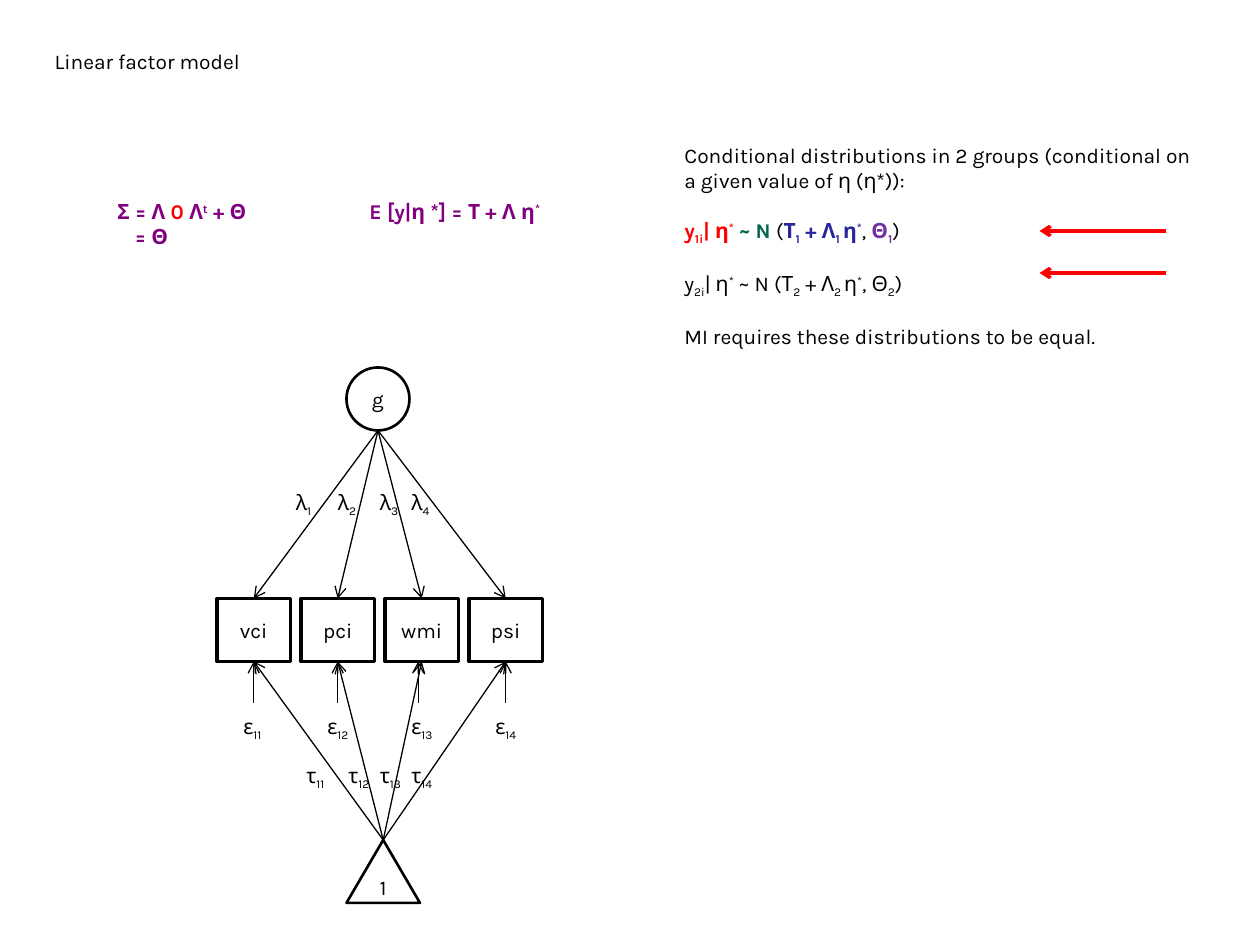
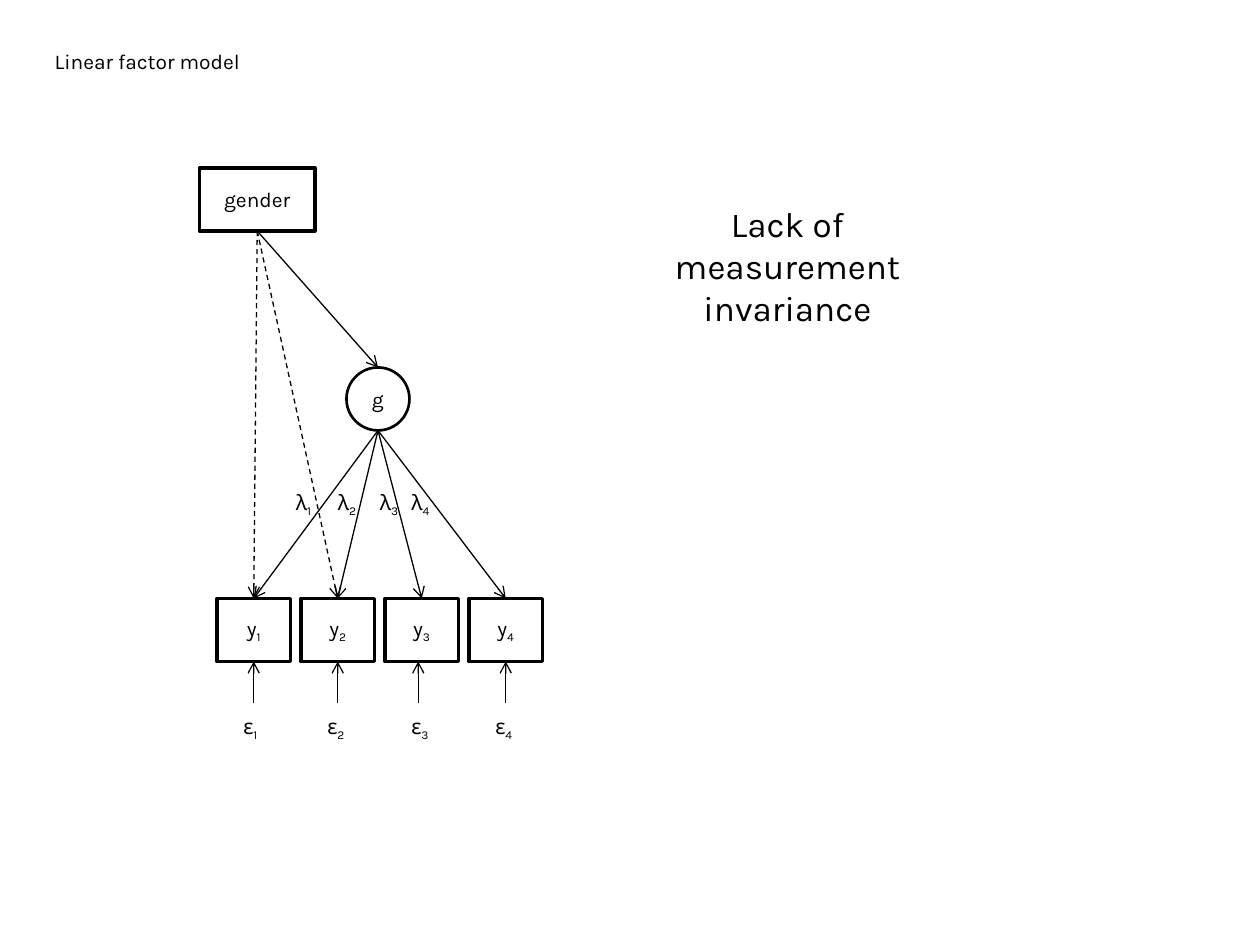
"""Build two slides showing a linear factor model as path diagrams."""
from dataclasses import dataclass, replace
from typing import NamedTuple

from lxml.etree import SubElement
from pptx import Presentation
from pptx.dml.color import RGBColor
from pptx.enum.dml import MSO_LINE
from pptx.enum.shapes import MSO_CONNECTOR, MSO_SHAPE
from pptx.enum.text import MSO_ANCHOR, PP_ALIGN
from pptx.oxml.ns import qn
from pptx.util import Pt


@dataclass(frozen=True)
class Theme:
    font: str = "Karla"
    body_size: float = 12
    large_size: float = 20
    black: str = "000000"
    white: str = "FFFFFF"
    red: str = "FF0000"
    green: str = "00664D"
    blue: str = "262699"
    violet: str = "7030A0"
    purple: str = "800080"
    thin: float = 0.75
    medium: float = 1.5
    thick: float = 2


THEME = Theme()
SUB, SUPER = -25, 30


class Point(NamedTuple):
    x: float
    y: float


class Area(NamedTuple):
    left: float
    top: float
    width: float
    height: float

    @property
    def top_mid(self) -> Point:
        return Point(self.left + self.width / 2, self.top)

    @property
    def bottom_mid(self) -> Point:
        return Point(self.left + self.width / 2, self.top + self.height)


@dataclass(frozen=True)
class Run:
    text: str
    base: int = 0
    color: str = THEME.black
    bold: bool = False


@dataclass(frozen=True)
class Para:
    runs: list[Run]
    before: float = 0
    indent: float = 0


@dataclass(frozen=True)
class Node:
    shape: MSO_SHAPE
    area: Area
    runs: list[Run]
    weight: float = THEME.thick
    filled: bool = True


@dataclass(frozen=True)
class Arrow:
    start: Point
    end: Point
    color: str = THEME.black
    weight: float = THEME.thin
    dashed: bool = False


TITLE = Area(24, 24, 672, 22)
INDICATORS = [Area(124 + 48 * i, 342, 42, 36) for i in range(4)]
FACTOR = Area(198, 210, 36, 36)
CONSTANT = Area(198, 480, 42, 36)
GENDER = Area(114, 96, 66, 36)
LOADING_LEFTS = (162, 186, 210, 228)
ERROR_LEFTS = (132, 180, 228, 276)
INTERCEPT_LEFTS = (168, 192, 210, 228)
ERROR_XS = (145, 193, 239, 289)


def styled(runs: list[Run], color: str) -> list[Run]:
    """Return the runs in bold and in one colour."""
    return [replace(run, color=color, bold=True) for run in runs]


def indexed(symbol: str, index: str) -> list[Run]:
    """Return a symbol with a subscript."""
    return [Run(symbol), Run(index, SUB)]


def eta_star(before: str) -> list[Run]:
    """Return text ending in eta, with a raised star."""
    return [Run(before + "η"), Run("*", SUPER)]


def mean(group: int) -> list[Run]:
    """Return the conditional mean of a group."""
    return [*indexed("Τ", str(group)), *indexed(" + Λ", f"{group} "), *eta_star("")]


def write(tf, paras: list[Para], size: float = THEME.body_size, align=PP_ALIGN.LEFT) -> None:
    """Fill a text frame with formatted paragraphs."""
    tf.word_wrap = True
    for i, para in enumerate(paras):
        p = tf.paragraphs[0] if i == 0 else tf.add_paragraph()
        p.alignment = align
        p.space_before = Pt(para.before)
        if para.indent:
            p._p.get_or_add_pPr().set("marL", str(Pt(para.indent)))
        for run in para.runs:
            r = p.add_run()
            r.text = run.text
            r.font.name = THEME.font
            r.font.size = Pt(size)
            r.font.bold = run.bold
            r.font.color.rgb = RGBColor.from_string(run.color)
            if run.base:
                r._r.get_or_add_rPr().set("baseline", str(run.base * 1000))


def add_text(slide, area: Area, paras: list[Para], **style) -> None:
    """Add a text box."""
    sp = slide.shapes.add_textbox(*map(Pt, area))
    write(sp.text_frame, paras, **style)


def add_node(slide, node: Node) -> None:
    """Draw one variable of the path diagram."""
    sp = slide.shapes.add_shape(node.shape, *map(Pt, node.area))
    sp.shadow.inherit = False
    sp.line.color.rgb = RGBColor.from_string(THEME.black)
    sp.line.width = Pt(node.weight)
    tf = sp.text_frame
    tf.vertical_anchor = MSO_ANCHOR.MIDDLE
    if node.filled:
        sp.fill.solid()
        sp.fill.fore_color.rgb = RGBColor.from_string(THEME.white)
    else:
        sp.fill.background()
        tf.margin_left = tf.margin_right = Pt(0)
    write(tf, [Para(node.runs)], align=PP_ALIGN.CENTER)


def add_arrow(slide, arrow: Arrow) -> None:
    """Draw one path with an open arrowhead at its end."""
    cx = slide.shapes.add_connector(MSO_CONNECTOR.STRAIGHT, *map(Pt, (*arrow.start, *arrow.end)))
    cx.line.color.rgb = RGBColor.from_string(arrow.color)
    cx.line.width = Pt(arrow.weight)
    if arrow.dashed:
        cx.line.dash_style = MSO_LINE.DASH
    sp_pr = cx._element.spPr
    SubElement(sp_pr.find(qn("a:ln")), qn("a:tailEnd")).set("type", "arrow")
    SubElement(sp_pr, qn("a:effectLst"))


def add_labels(slide, symbol: str, lefts: tuple, top: float, prefix: str = "") -> None:
    """Add a row of numbered Greek labels."""
    for i, left in enumerate(lefts, 1):
        add_text(slide, Area(left, top, 30, 22), [Para(indexed(symbol, f"{prefix}{i}"))])


def add_model_slide(prs, names: list[list[Run]], prefix: str = ""):
    """Add a titled slide with the factor, its indicators and their errors."""
    slide = prs.slides.add_slide(prs.slide_layouts[5])
    title = slide.shapes.title
    title.left, title.top, title.width, title.height = map(Pt, TITLE)
    title.text_frame.vertical_anchor = MSO_ANCHOR.TOP
    write(title.text_frame, [Para([Run("Linear factor model")])])
    add_node(slide, Node(MSO_SHAPE.OVAL, FACTOR, [Run("g")], THEME.medium, False))
    for area, name, x in zip(INDICATORS, names, ERROR_XS):
        add_node(slide, Node(MSO_SHAPE.RECTANGLE, area, name))
        add_arrow(slide, Arrow(FACTOR.bottom_mid, area.top_mid))
        add_arrow(slide, Arrow(Point(x, 402), Point(x, 378)))
    add_labels(slide, "λ", LOADING_LEFTS, 276)
    add_labels(slide, "ε", ERROR_LEFTS, 404, prefix)
    return slide


def add_distributions_slide(prs) -> None:
    """Add the slide on conditional distributions in two groups."""
    names = [[Run(name)] for name in ("vci", "pci", "wmi", "psi")]
    slide = add_model_slide(prs, names, "1")
    add_node(slide, Node(MSO_SHAPE.ISOSCELES_TRIANGLE, CONSTANT, [Run("1")], THEME.medium, False))
    for area in INDICATORS:
        add_arrow(slide, Arrow(CONSTANT.top_mid, area.bottom_mid))
    add_labels(slide, "τ", INTERCEPT_LEFTS, 432, "1")

    covariance = [Run("Σ = Λ "), Run("0"), Run(" Λ"), Run("t", SUPER), Run(" + Θ")]
    covariance = styled(covariance, THEME.purple)
    covariance[1] = replace(covariance[1], color=THEME.red)
    add_text(slide, Area(60, 110, 120, 36),
             [Para(covariance), Para(styled([Run("= Θ")], THEME.purple), indent=10)])
    add_text(slide, Area(204, 110, 162, 22),
             [Para(styled(eta_star("E [y|η *] = Τ + Λ "), THEME.purple))])

    first_group = [
        *styled([*indexed("y", "1i"), *eta_star("| ")], THEME.red),
        *styled([Run(" ~ N ")], THEME.green), Run("("),
        *styled(mean(1), THEME.blue), Run(", "),
        *styled(indexed("Θ", "1"), THEME.violet), Run(")"),
    ]
    second_group = [*indexed("y", "2i"), *eta_star("| "), Run(" ~ N ("),
                    *mean(2), *indexed(", Θ", "2"), Run(")")]
    intro = "Conditional distributions in 2 groups (conditional on a given value of η (η*)):"
    conclusion = "MI requires these distributions to be equal."
    add_text(slide, Area(384, 78, 312, 181), [
        Para([Run(intro)]), Para(first_group, 14),
        Para(second_group, 14), Para([Run(conclusion)], 14)])
    for y in (132, 156):
        add_arrow(slide, Arrow(Point(666, y), Point(594, y), THEME.red, THEME.thick))


def add_invariance_slide(prs) -> None:
    """Add the slide on lack of measurement invariance."""
    slide = add_model_slide(prs, [indexed("y", str(i)) for i in range(1, 5)])
    add_node(slide, Node(MSO_SHAPE.RECTANGLE, GENDER, [Run("gender")]))
    add_arrow(slide, Arrow(GENDER.bottom_mid, FACTOR.top_mid))
    for area in INDICATORS[:2]:
        add_arrow(slide, Arrow(GENDER.bottom_mid, area.top_mid, dashed=True))
    add_text(slide, Area(366, 112, 168, 80), [Para([Run("Lack of measurement invariance")])],
             size=THEME.large_size, align=PP_ALIGN.CENTER)


def main() -> None:
    """Build and save the presentation."""
    prs = Presentation()
    prs.slide_width, prs.slide_height = Pt(720), Pt(540)
    add_distributions_slide(prs)
    add_invariance_slide(prs)
    prs.save("out.pptx")


if __name__ == "__main__":
    main()
